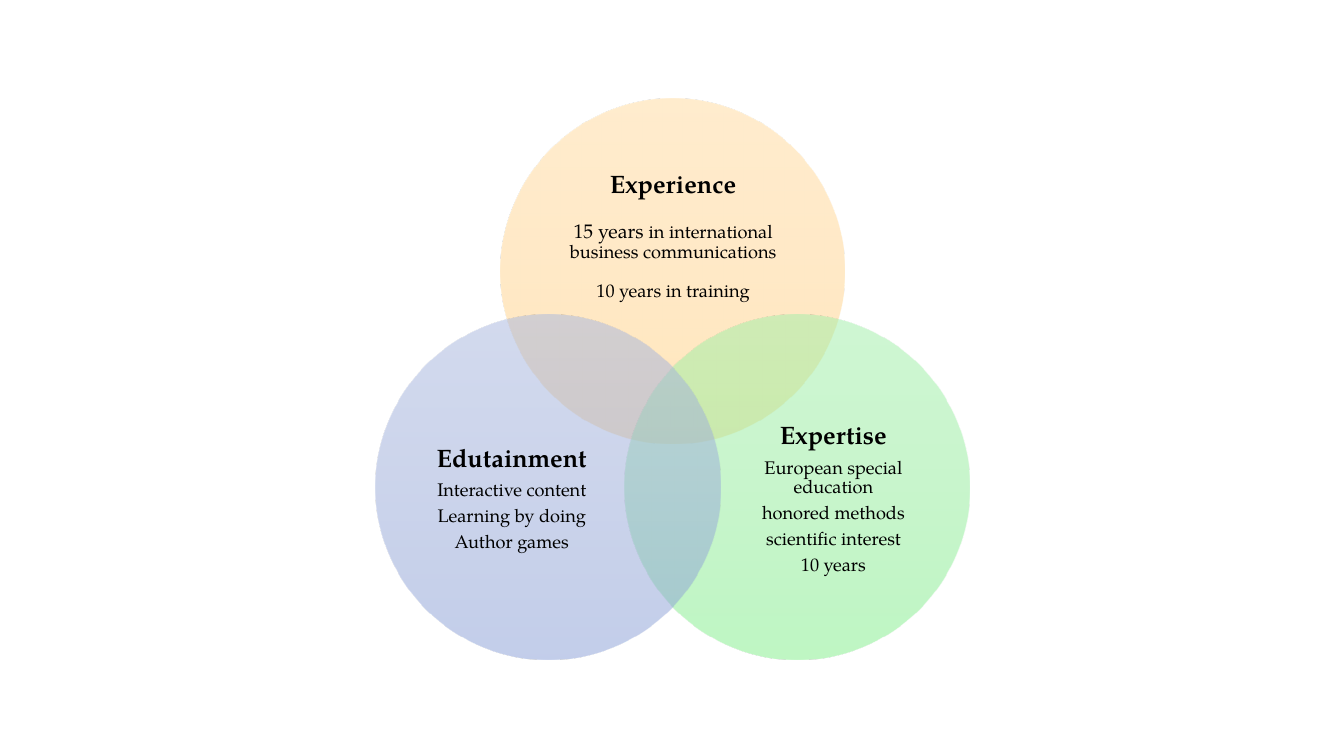
"""Builds a slide with a three-circle Venn diagram: experience, expertise, edutainment."""
import math

from lxml import etree
from pptx import Presentation
from pptx.dml.color import RGBColor
from pptx.enum import shapes, text
from pptx.oxml import ns
from pptx.util import Inches, Pt

BLACK = RGBColor(0x00, 0x00, 0x00)
ORANGES = [RGBColor(0xFF, 0xDB, 0x9E), RGBColor(0xFF, 0xD5, 0x90), RGBColor(0xFF, 0xD0, 0x7C)]
GREENS = [RGBColor(0xA1, 0xF0, 0xA9), RGBColor(0x93, 0xED, 0x9B), RGBColor(0x7F, 0xEF, 0x89)]
BLUES = [RGBColor(0xA8, 0xB7, 0xDF), RGBColor(0x9A, 0xAB, 0xD9), RGBColor(0x88, 0x9E, 0xD7)]
FONT = "TeX Gyre Pagella"
DIAMETER, RING = 3.42, 1.43
CENTER_X, CENTER_Y = 6.67, 4.12

TITLE = {"size": Pt(18), "bold": True}
LEAD = {"size": Pt(14), "bold": False}
BODY = {"size": Pt(13), "bold": False}

CIRCLES = [
    (ORANGES, (5.42, 1.58, 2.51, 1.54), 16, 14.3, [
        [("Experience", TITLE)],
        [("15 years ", LEAD), ("in international business communications", BODY)],
        [("10 years in training", BODY)]]),
    (GREENS, (7.24, 4.01, 2.05, 1.88), 6, 4.4, [
        [("Expertise", TITLE)],
        [("European special education", BODY)],
        [("honored methods", BODY)],
        [("scientific interest", BODY)],
        [("10 years", BODY)]]),
    (BLUES, (4.05, 4.01, 2.05, 1.88), 6, 4.4, [
        [("Edutainment", TITLE)],
        [("Interactive content", BODY)],
        [("Learning by doing", BODY)],
        [("Author games", BODY)]]),
]


def fill_gradient(sp, colors):
    sp.fill.gradient()
    sp.fill.gradient_angle = 270
    stops = sp._element.spPr.find(".//" + ns.qn("a:gsLst"))
    for stop in list(stops):
        stops.remove(stop)
    for i, color in enumerate(colors):
        stop = etree.SubElement(stops, ns.qn("a:gs"), pos=str(i * 50000))
        clr = etree.SubElement(stop, ns.qn("a:srgbClr"), val=str(color))
        etree.SubElement(clr, ns.qn("a:alpha"), val="50000")


prs = Presentation()
prs.slide_width, prs.slide_height = Inches(13.33), Inches(7.5)
s = prs.slides.add_slide(prs.slide_layouts[6])

for i, (colors, box, title_gap, body_gap, paragraphs) in enumerate(CIRCLES):
    angle = math.radians(120 * i)
    left = CENTER_X + RING * math.sin(angle) - DIAMETER / 2
    top = CENTER_Y - RING * math.cos(angle) - DIAMETER / 2
    sp = s.shapes.add_shape(shapes.MSO_SHAPE.OVAL, Inches(left), Inches(top),
                            Inches(DIAMETER), Inches(DIAMETER))
    sp.shadow.inherit = False
    sp.line.fill.background()
    fill_gradient(sp, colors)

    tf = s.shapes.add_textbox(*map(Inches, box)).text_frame
    tf.word_wrap = True
    tf.vertical_anchor = text.MSO_ANCHOR.MIDDLE
    tf.margin_left = tf.margin_right = tf.margin_top = tf.margin_bottom = 0
    for n, runs in enumerate(paragraphs):
        p = tf.add_paragraph() if n else tf.paragraphs[0]
        p.alignment = text.PP_ALIGN.CENTER
        p.line_spacing = 0.9
        if n:
            p.space_before = Pt(title_gap if n == 1 else body_gap)
        for words, style in runs:
            r = p.add_run()
            r.text = words
            r.font.name = FONT
            r.font.color.rgb = BLACK
            for name, value in style.items():
                setattr(r.font, name, value)

prs.save("out.pptx")
